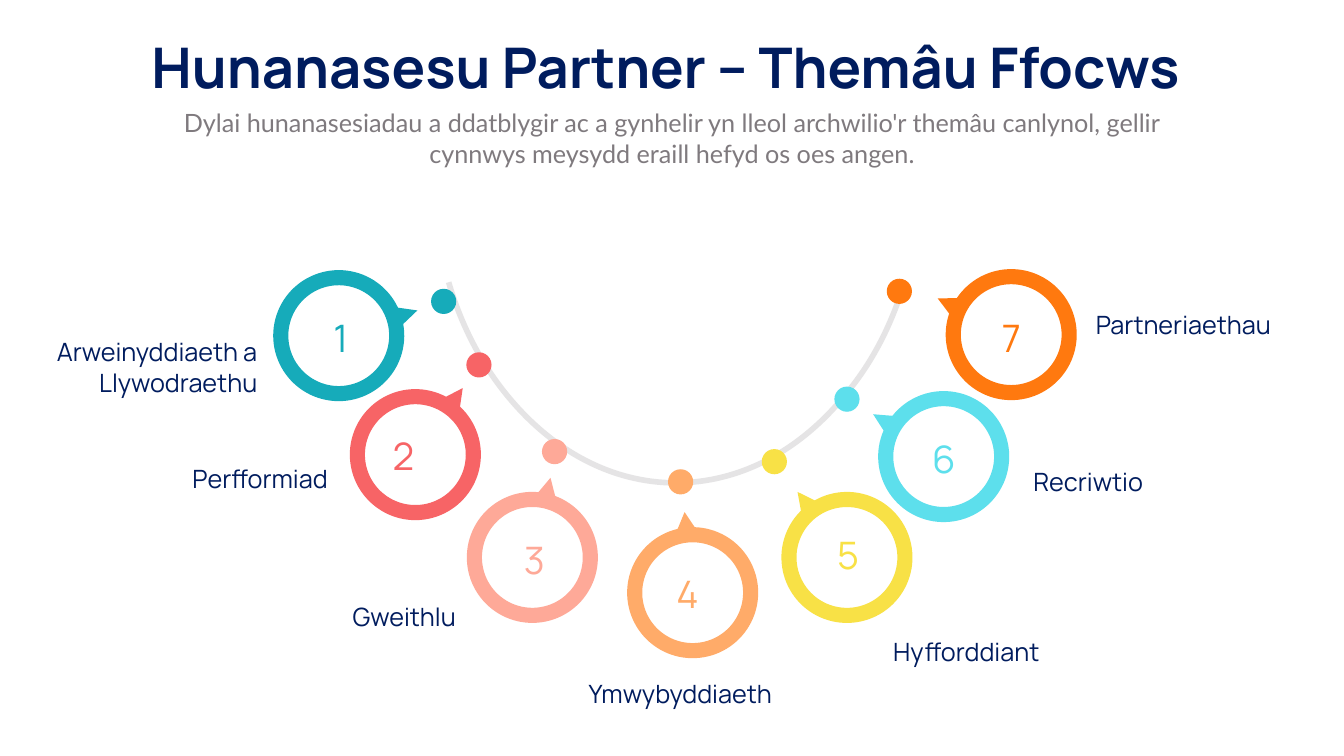
import math
from pptx import Presentation, util as u
from pptx.dml import color
from pptx.enum import shapes, text
from pptx.oxml import ns

NAVY, GREY, PALE = "001C5E", "7F7A7E", "E5E4E5"
TITLE = "Hunanasesu Partner – Themâu Ffocws"
INTRO = ("Dylai hunanasesiadau a ddatblygir ac a gynhelir yn lleol archwilio'r themâu "
         "canlynol, gellir cynnwys meysydd eraill hefyd os oes angen.")

THEMES = [
    ("Arweinyddiaeth a Llywodraethu", "16ABBA", (3.36, 3.33), (4.14, 3.08), (4.4, 2.99),
     (3.38, 3.35), (0.34, 3.29, 2.31, 0.7), "RIGHT"),
    ("Perfformiad", "F76466", (4.12, 4.51), (4.59, 3.85), (4.75, 3.62),
     (4.0, 4.52), (1.21, 4.55, 2.14, 0.4), "RIGHT"),
    ("Gweithlu", "FEA998", (5.28, 5.53), (5.46, 4.74), (5.5, 4.48),
     (5.3, 5.55), (3.21, 5.92, 1.6, 0.4), "CENTER"),
    ("Ymwybyddiaeth", "FFAB69", (6.87, 5.88), (6.79, 5.08), (6.75, 4.78),
     (6.82, 5.89), (5.74, 6.68, 2.29, 0.4), "LEFT"),
    ("Hyfforddiant", "F8E146", (8.4, 5.53), (7.91, 4.88), (7.68, 4.58),
     (8.41, 5.5), (8.76, 6.26, 2.12, 0.4), "LEFT"),
    ("Recriwtio", "5DDFEC", (9.36, 4.53), (8.66, 4.11), (8.4, 3.96),
     (9.36, 4.55), (10.15, 4.58, 2.12, 0.4), "LEFT"),
    ("Partneriaethau", "FF790F", (10.03, 3.32), (9.3, 2.96), (8.92, 2.89),
     (10.03, 3.35), (10.77, 3.02, 2.12, 0.4), "LEFT"),
]
TRACK = [
    (8.97, 2.8),
    (8.85, 3.2), (8.67, 3.56), (8.43, 3.86),
    (7.95, 4.48), (7.33, 4.79), (6.7, 4.79),
    (6.08, 4.79), (5.46, 4.48), (4.98, 3.86),
    (4.74, 3.55), (4.56, 3.18), (4.45, 2.8),
]
OUTER, INNER, DOT = 0.65, 0.5, 0.25
BASE = 7.5
NUM_W, NUM_H = 1.21, 0.51

deck = Presentation()
deck.slide_width, deck.slide_height = u.Inches(13.33), u.Inches(7.5)
slide = deck.slides.add_slide(deck.slide_layouts[6])


def rgb(code):
    return color.RGBColor.from_string(code)


def paint(shape, hue):
    shape.shadow.inherit = False
    shape.fill.solid()
    shape.fill.fore_color.rgb = rgb(hue)
    shape.line.fill.background()


def write(words, box, size, face, hue, align, bold=False, wrap=True, inset=None):
    frame = slide.shapes.add_textbox(*map(u.Inches, box)).text_frame
    form = {"word_wrap": wrap, "auto_size": text.MSO_AUTO_SIZE.SHAPE_TO_FIT_TEXT}
    if inset is not None:
        form["vertical_anchor"] = text.MSO_ANCHOR.MIDDLE
        for side in ("left", "right", "top", "bottom"):
            form["margin_" + side] = u.Inches(inset)
    for key, value in form.items():
        setattr(frame, key, value)
    para = frame.paragraphs[0]
    para.alignment = text.PP_ALIGN[align]
    run = para.add_run()
    run.text = words
    for key, value in {"size": u.Pt(size), "name": face, "bold": bold}.items():
        setattr(run.font, key, value)
    run.font.color.rgb = rgb(hue)


def arc(centre, radius, start, sweep, count=6):
    step = math.radians(sweep / count)
    pull = 4 / 3 * math.tan(step / 4)

    def spot(turn, lean=0):
        return (centre[0] + radius * (math.cos(turn) - lean * math.sin(turn)),
                centre[1] + radius * (math.sin(turn) + lean * math.cos(turn)))

    turn = math.radians(start)
    points = [spot(turn)]
    for _ in range(count):
        points += [spot(turn, pull), spot(turn + step, -pull), spot(turn + step)]
        turn += step
    return points


def curve(lines):
    for i in range(0, len(lines) - 2, 3):
        first, *rest = lines[i:i + 3]
        first.tag = ns.qn("a:cubicBezTo")
        for line in rest:
            first.append(line[0])
            line.getparent().remove(line)


def outline(loops, close):
    loops = [[(u.Inches(x), u.Inches(y)) for x, y in loop] for loop in loops]
    pen = slide.shapes.build_freeform(*loops[0][0])
    for i, loop in enumerate(loops):
        if i:
            pen.move_to(*loop[0])
        pen.add_line_segments(loop[1:], close=close)
    shape = pen.convert_to_shape()
    lines = list(shape._element.iter(ns.qn("a:lnTo")))
    for loop in loops:
        size = len(loop) - 1
        curve(lines[:size])
        lines = lines[size:]
    return shape


def ring(centre, tip, hue):
    aim = math.degrees(math.atan2(tip[1] - centre[1], tip[0] - centre[0]))
    rim = arc(centre, OUTER, aim + BASE, 360 - 2 * BASE) + [tip]
    hole = arc(centre, INNER, aim, -360)
    paint(outline([rim, hole], True), hue)


write(TITLE, (1.26, 0.27, 10.68, 0.77), 40, "Manrope", NAVY, "CENTER", bold=True, wrap=False)
write(INTRO, (1.46, 1.02, 10.41, 0.7), 18, "Lato", GREY, "CENTER")

track = outline([TRACK], False)
track.shadow.inherit = False
track.fill.background()
track.line.color.rgb = rgb(PALE)
track.line.width = u.Pt(4)

for num, (theme, hue, centre, tip, dot, mid, box, align) in enumerate(THEMES, 1):
    place = (dot[0] - DOT / 2, dot[1] - DOT / 2, DOT, DOT)
    paint(slide.shapes.add_shape(shapes.MSO_SHAPE.OVAL, *map(u.Inches, place)), hue)
    ring(centre, tip, hue)
    spot = (mid[0] - NUM_W / 2, mid[1] - NUM_H / 2, NUM_W, NUM_H)
    write(str(num), spot, 27, "Manrope", hue, "CENTER", inset=0.03)
    write(theme, box, 18, "Manrope", NAVY, align)

deck.save("out.pptx")
